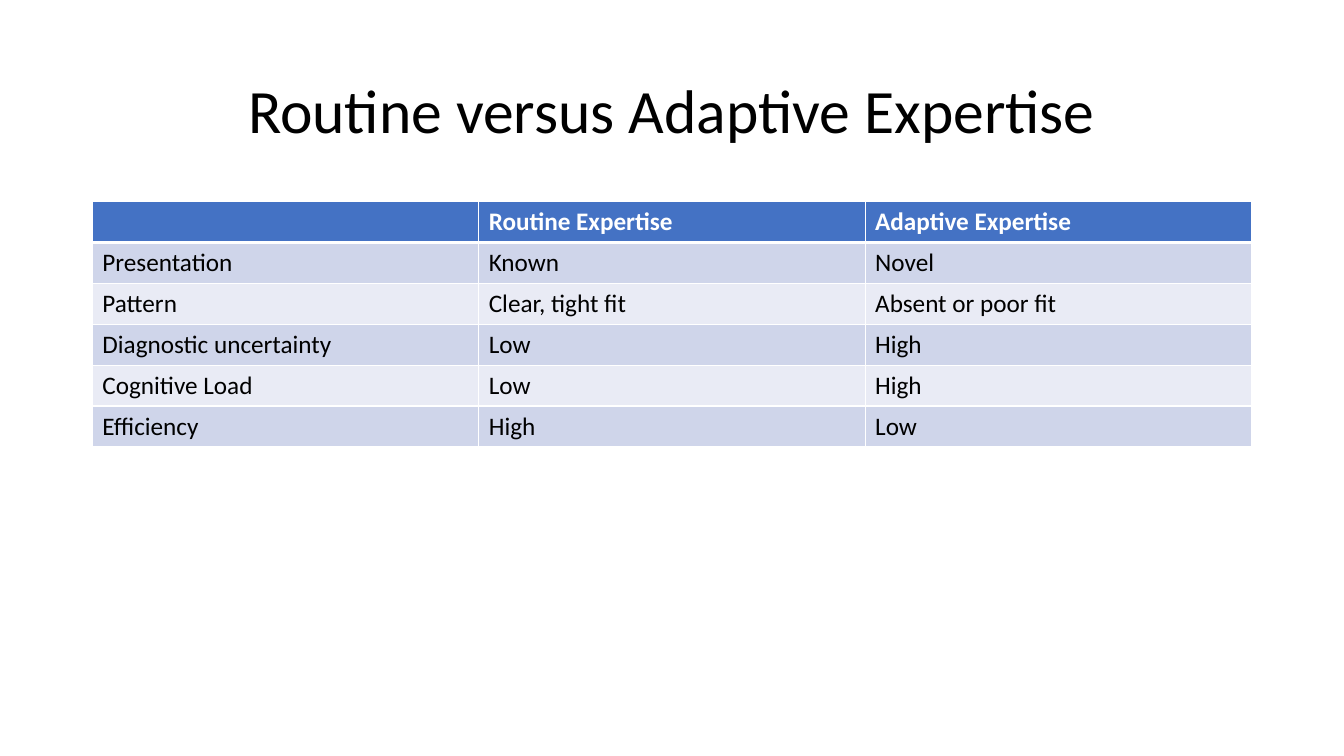
from lxml import etree
from pptx import Presentation
from pptx import util as u
from pptx.dml.color import RGBColor
from pptx.enum import text
from pptx.oxml.ns import qn

WHITE = RGBColor(0xFF, 0xFF, 0xFF)
BLACK = RGBColor(0, 0, 0)
BLUE = RGBColor(0x44, 0x72, 0xC4)
BANDS = RGBColor(0xCF, 0xD5, 0xEA), RGBColor(0xE9, 0xEB, 0xF5)

FACE = "Calibri"
TITLE = {"name": FACE, "size": u.Pt(44), "bold": False}
CELL = {"name": FACE, "size": u.Pt(18)}

ROWS = [
    ("", "Routine Expertise", "Adaptive Expertise"),
    ("Presentation", "Known", "Novel"),
    ("Pattern", "Clear, tight fit", "Absent or poor fit"),
    ("Diagnostic uncertainty", "Low", "High"),
    ("Cognitive Load", "Low", "High"),
    ("Efficiency", "High", "Low"),
]


def style(font, form, color):
    for key, val in form.items():
        setattr(font, key, val)
    font.color.rgb = color


def place(shape, box):
    for key, val in zip(("left", "top", "width", "height"), box):
        setattr(shape, key, u.Pt(val))


def border(cell, row):
    # The rule between header and body is thicker
    wide = {"T": 3 if row == 1 else 1, "B": 3 if row == 0 else 1}
    props = cell._tc.get_or_add_tcPr()
    for side in "LRTB":
        line = etree.SubElement(props, qn("a:ln" + side),
                                w=str(u.Pt(wide.get(side, 1))))
        fill = etree.SubElement(line, qn("a:solidFill"))
        etree.SubElement(fill, qn("a:srgbClr"), val=str(WHITE))


def add_title(slide, box, words):
    title = slide.shapes.title
    place(title, box)
    frame = title.text_frame
    frame.text = words
    frame.word_wrap = True
    frame.vertical_anchor = text.MSO_ANCHOR.MIDDLE
    para = frame.paragraphs[0]
    para.alignment = text.PP_ALIGN.CENTER
    para.line_spacing = 0.9
    style(para.runs[0].font, TITLE, BLACK)


def add_grid(slide, box, rows):
    left, top, width, height = map(u.Pt, box)
    table = slide.shapes.add_table(len(rows), len(rows[0]),
                                   left, top, width, height).table
    for r, row in enumerate(rows):
        head = r == 0
        for c, words in enumerate(row):
            cell = table.cell(r, c)
            border(cell, r)
            cell.fill.solid()
            cell.fill.fore_color.rgb = BLUE if head else BANDS[(r - 1) % 2]
            cell.text = words
            font = cell.text_frame.paragraphs[0].font
            style(font, {**CELL, "bold": head}, WHITE if head else BLACK)


def main():
    deck = Presentation()
    deck.slide_width, deck.slide_height = u.Pt(960), u.Pt(540)
    slide = deck.slides.add_slide(deck.slide_layouts[5])

    # Heading
    add_title(slide, (66, 28.75, 828, 104.4), "Routine versus Adaptive Expertise")
    # Comparison table
    add_grid(slide, (66, 144, 828, 175.2), ROWS)

    deck.save("out.pptx")


if __name__ == "__main__":
    main()
